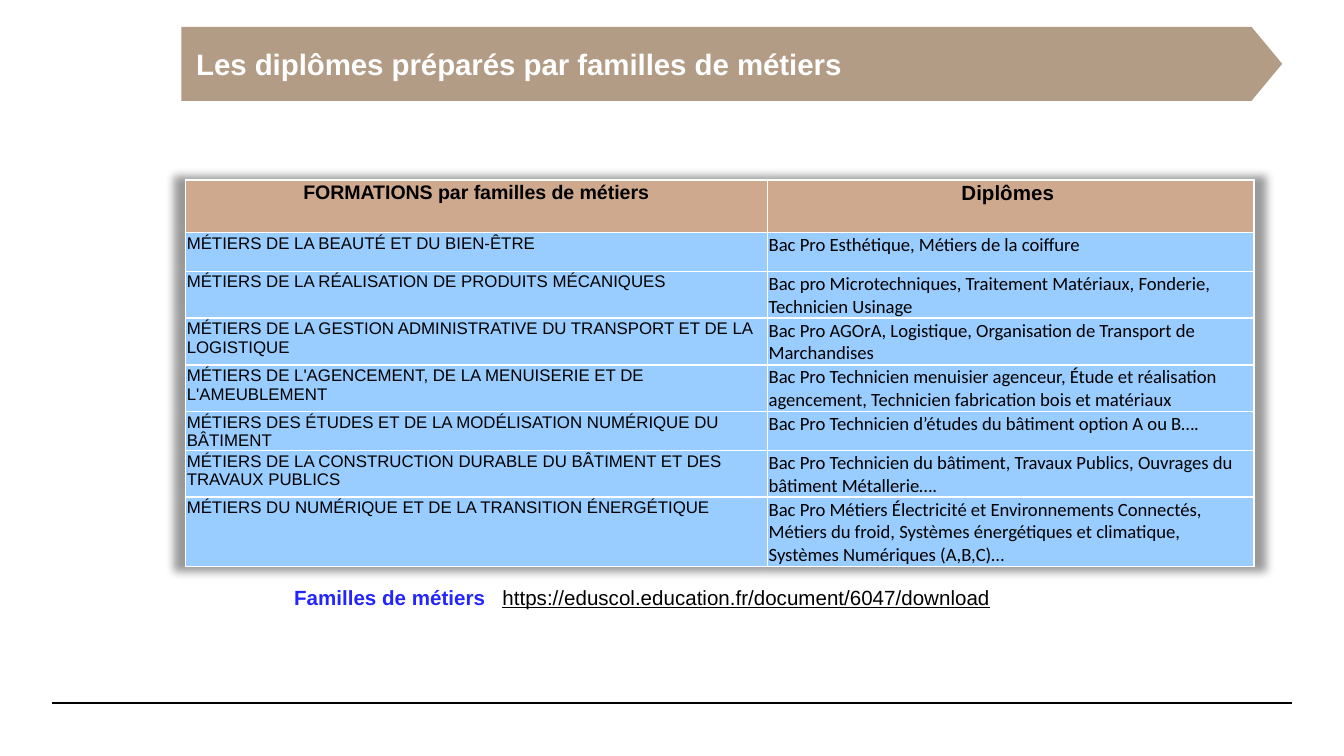
from lxml import etree
from pptx import Presentation
from pptx.dml.color import RGBColor
from pptx.enum.shapes import MSO_CONNECTOR, MSO_SHAPE
from pptx.enum.text import MSO_ANCHOR, PP_ALIGN
from pptx.oxml import parse_xml
from pptx.oxml.ns import qn
from pptx.util import Inches, Pt

LINE = MSO_CONNECTOR.STRAIGHT
BANNER = MSO_SHAPE.PENTAGON
MIDDLE = MSO_ANCHOR.MIDDLE
LEFT, CENTER, JUSTIFY = PP_ALIGN.LEFT, PP_ALIGN.CENTER, PP_ALIGN.JUSTIFY
NS = 'xmlns:a="http://schemas.openxmlformats.org/drawingml/2006/main"'

COLORS = {
    "black": "000000",
    "white": "FFFFFF",
    "banner": "B29C85",
    "header": "CFA98D",
    "row": "99CCFF",
    "label": "2424FF",
}

HEADINGS = ("FORMATIONS par familles de métiers", "Diplômes ")
FAMILIES = [
    ("MÉTIERS DE LA BEAUTÉ ET DU BIEN-ÊTRE",
     "Bac Pro Esthétique, Métiers de la coiffure"),
    ("MÉTIERS DE LA RÉALISATION DE PRODUITS MÉCANIQUES",
     "Bac pro Microtechniques, Traitement Matériaux, Fonderie, Technicien Usinage"),
    ("MÉTIERS DE LA GESTION ADMINISTRATIVE DU TRANSPORT ET DE LA LOGISTIQUE",
     "Bac Pro AGOrA, Logistique, Organisation de Transport de Marchandises"),
    ("MÉTIERS DE L'AGENCEMENT, DE LA MENUISERIE ET DE L'AMEUBLEMENT",
     "Bac Pro Technicien menuisier agenceur, Étude et réalisation agencement, "
     "Technicien fabrication bois et matériaux"),
    ("MÉTIERS DES ÉTUDES ET DE LA MODÉLISATION NUMÉRIQUE DU BÂTIMENT",
     "Bac Pro Technicien d’études du bâtiment option A ou B…."),
    ("MÉTIERS DE LA CONSTRUCTION DURABLE DU BÂTIMENT ET DES TRAVAUX PUBLICS",
     "Bac Pro Technicien du bâtiment, Travaux Publics, Ouvrages du bâtiment Métallerie…."),
    ("MÉTIERS DU NUMÉRIQUE ET DE LA TRANSITION ÉNERGÉTIQUE",
     "Bac Pro Métiers Électricité et Environnements Connectés, Métiers du froid, "
     "Systèmes énergétiques et climatique, Systèmes Numériques (A,B,C)…"),
]


def set_font(font, name, size, color, bold=False):
    font.name, font.size, font.bold = name, Pt(size), bold
    font.color.rgb = RGBColor.from_string(COLORS[color])


# A 16:9 slide
prs = Presentation()
prs.slide_width = Inches(10)
prs.slide_height = Inches(10 * 9 / 16)
slide = prs.slides.add_slide(prs.slide_layouts[6])

# Footer rule
footer = slide.shapes.add_connector(LINE, Inches(0.39), Inches(5.23), Inches(9.61), Inches(5.23))
footer.line.color.rgb = RGBColor.from_string(COLORS["black"])
footer.line.width = Pt(0.8)
etree.SubElement(footer._element.spPr, qn("a:effectLst"))

# Table of families and diplomas, with a soft shadow
diplomas = slide.shapes.add_table(len(FAMILIES) + 1, 2, Inches(1.38), Inches(1.34),
                                  Inches(7.95), Inches(2.42)).table
diplomas._tbl.tblPr.insert(0, parse_xml(
    f'<a:effectLst {NS}><a:outerShdw blurRad="63500" sx="102000" sy="102000" algn="ctr" '
    f'rotWithShape="0"><a:srgbClr val="{COLORS["black"]}"><a:alpha val="40000"/></a:srgbClr>'
    '</a:outerShdw></a:effectLst>'))
for column, width in zip(diplomas.columns, (4.33, 3.62)):
    column.width = Inches(width)

for r, texts in enumerate([HEADINGS] + FAMILIES):
    is_header = r == 0
    diplomas.rows[r].height = Inches(0.39 if is_header else 0.29)
    styles = (("Arial", 10.5), ("Arial", 11)) if is_header else (("Arial", 9), ("Calibri", 10))
    for c, (text, (name, size)) in enumerate(zip(texts, styles)):
        cell = diplomas.cell(r, c)
        cell.margin_left = cell.margin_top = cell.margin_right = Inches(0.01)
        cell.margin_bottom = 0
        cell.fill.solid()
        cell.fill.fore_color.rgb = RGBColor.from_string(COLORS["header" if is_header else "row"])
        for i, side in enumerate(("lnL", "lnR", "lnT", "lnB")):
            cell._tc.tcPr.insert(i, parse_xml(
                f'<a:{side} {NS} w="12700"><a:solidFill><a:srgbClr val="{COLORS["white"]}"/>'
                f'</a:solidFill></a:{side}>'))
        cell.text = text
        paragraph = cell.text_frame.paragraphs[0]
        paragraph.alignment = CENTER if is_header else LEFT
        set_font(paragraph.font, name, size, "black", is_header)

# Title banner
banner = slide.shapes.add_shape(BANNER, Inches(1.35), Inches(0.2), Inches(8.19), Inches(0.55))
banner.adjustments[0] = 0.415
banner.shadow.inherit = False
banner.fill.solid()
banner.fill.fore_color.rgb = RGBColor.from_string(COLORS["banner"])
banner.line.fill.background()
title = banner.text_frame
title.margin_left = title.margin_right = Inches(0.11)
title.margin_top = title.margin_bottom = Inches(0.05)
title.vertical_anchor = MIDDLE
title.text = "Les diplômes préparés par familles de métiers"
title.paragraphs[0].alignment = JUSTIFY
set_font(title.paragraphs[0].font, "Arial", 15.75, "white", True)

# Source link, set off from its label by a tab stop
source = slide.shapes.add_textbox(Inches(2.09), Inches(4.3), Inches(7.01), Inches(0.29)).text_frame
source.word_wrap = True
source_line = source.paragraphs[0]
tabs = etree.SubElement(source_line._p.get_or_add_pPr(), qn("a:tabLst"))
etree.SubElement(tabs, qn("a:tab"), pos=str(Inches(1.55)), algn="l")
for text, color, bold, underline in (
        ("Familles de métiers\t", "label", True, False),
        ("https://eduscol.education.fr/document/6047/download", "black", False, True)):
    run = source_line.add_run()
    run.text = text
    set_font(run.font, "Arial", 11, color, bold)
    run.font.underline = underline

prs.save("out.pptx")
